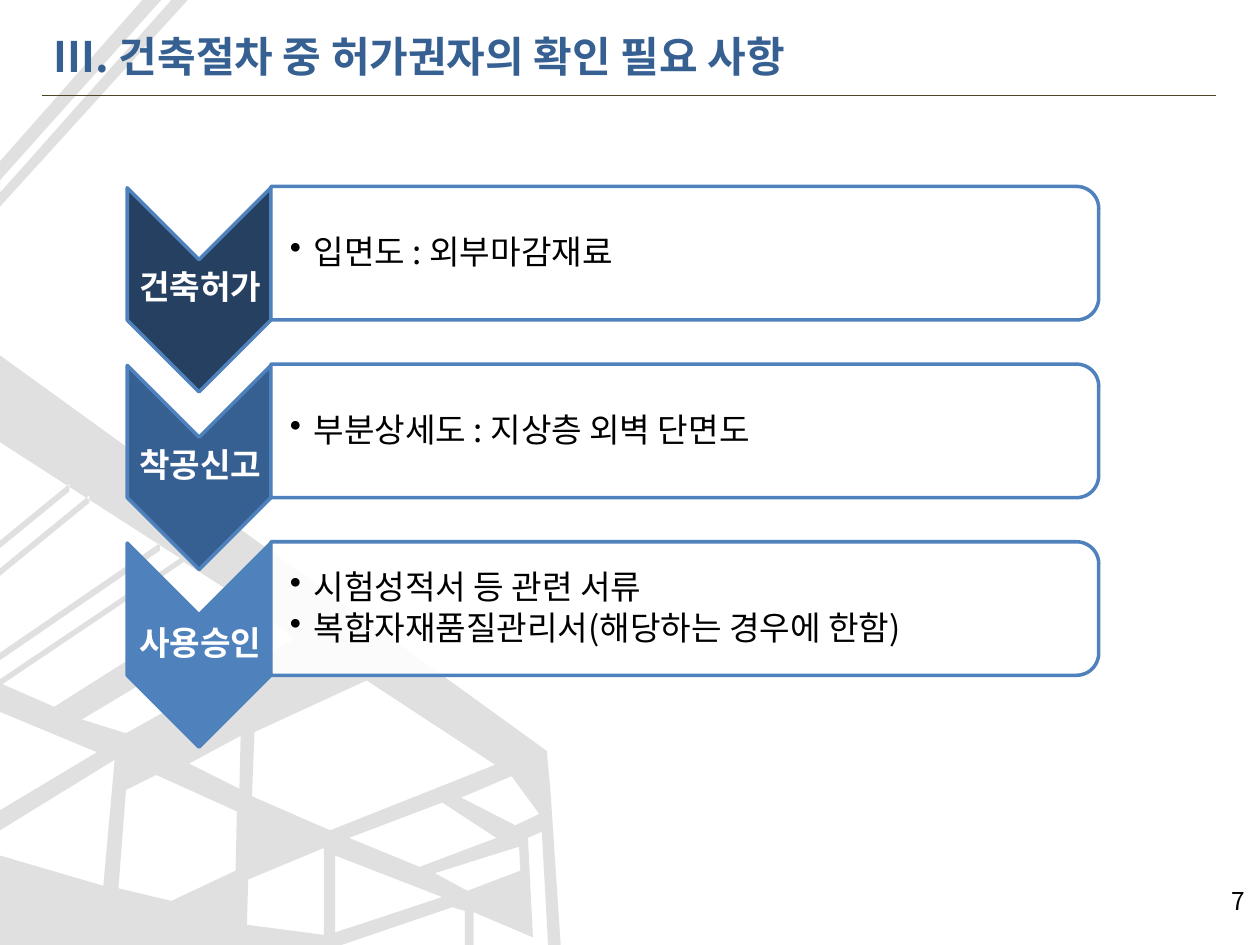
from lxml import etree
from pptx import Presentation
from pptx.dml.color import RGBColor
from pptx.enum import shapes, text
from pptx.oxml.ns import qn
from pptx.util import Inches, Pt

THEME = dict(
    font="Noto Sans CJK KR", title="376092", rule="4A452A", edge="4F81BD",
    steel="BFBFBF", white="FFFFFF", ink="000000",
    big=24, body=19, small=14,
)
TITLE = "III. 건축절차 중 허가권자의 확인 필요 사항"
PAGE = "7"
STEPS = [
    ("건축허가", "254061", ["입면도 : 외부마감재료"]),
    ("착공신고", "376092", ["부분상세도 : 지상층 외벽 단면도"]),
    ("사용승인", "4F81BD", ["시험성적서 등 관련 서류",
                        "복합자재품질관리서(해당하는 경우에 한함)"]),
]
CRANE = [
    (113, 0, 0, 128, 0, 164, 149, 0),
    (128, 0, 0, 143, 0, 153, 136, 0),
]
FRAME = [
    (434, 596, 0, 282, 0, 351, 143, 443, 0, 539, 0, 565, 77, 597,
     0, 643, 0, 659, 91, 603, 82, 703, 0, 679, 0, 750, 271, 750,
     359, 720, 369, 723, 369, 750, 376, 750, 376, 724, 423, 744,
     419, 665, 430, 660, 435, 750, 445, 750, 437, 629),
    (2, 543, 146, 446, 185, 471, 43, 561),
    (65, 571, 207, 486, 234, 507, 100, 582),
    (187, 691, 136, 715, 94, 705, 100, 627, 124, 615, 188, 644),
    (190, 626, 150, 606, 191, 584),
    (257, 742, 196, 734, 197, 698, 257, 673),
    (200, 632, 202, 581, 291, 540, 393, 607, 262, 659),
    (351, 637, 394, 665, 333, 688, 277, 665),
    (266, 740, 266, 679, 351, 712),
    (371, 707, 345, 693, 412, 672, 413, 691),
    (409, 655, 366, 633, 406, 616, 428, 646),
]
RAILS = [(432, 55, 387), (454, 71, 396), (521, 127, 434)]


def paint(shape, fill, alpha=None, edge=None):
    shape.shadow.inherit = False
    shape.fill.solid()
    shape.fill.fore_color.rgb = RGBColor.from_string(fill)
    if alpha:
        tone = shape.fill._xPr.find(".//" + qn("a:srgbClr"))
        etree.SubElement(tone, qn("a:alpha")).set("val", str(alpha * 1000))
    if edge:
        shape.line.color.rgb = RGBColor.from_string(edge)
        shape.line.width = Pt(2)
    else:
        shape.line.fill.background()


def trace(home, loops):
    pen = None
    for loop in loops:
        (x, y), *rest = zip(loop[::2], loop[1::2])
        if pen:
            pen.move_to(x, y)
        else:
            pen = home.build_freeform(x, y, scale=Inches(0.01))
        pen.add_line_segments(rest, close=True)
    paint(pen.convert_to_shape(), THEME["steel"], 48)


def turned(home, kind, x, y, w, h):
    left, top = x + (w - h) / 2, y + (h - w) / 2
    shape = home.add_shape(kind, *map(Inches, (left, top, h, w)))
    shape.rotation = 90
    return shape


def write(home, area, lines, size, color, bold=False, align=None,
          inset=None, middle=True, bullet=False, after=0):
    box = home.add_textbox(*map(Inches, area))
    frame = box.text_frame
    frame.word_wrap = True
    if middle:
        frame.vertical_anchor = text.MSO_ANCHOR.MIDDLE
    if inset:
        frame.margin_left = Inches(inset)
        frame.margin_right = frame.margin_top = frame.margin_bottom = Inches(0.01)
    frame.text = "\n".join(lines)
    for para in frame.paragraphs:
        para.alignment = align
        if inset:
            para.line_spacing = 0.9
            para.space_after = Pt(after)
        if bullet:
            props = para._p.get_or_add_pPr()
            props.set("marL", str(Inches(0.19)))
            props.set("indent", str(-Inches(0.19)))
            etree.SubElement(props, qn("a:buChar")).set("char", "•")
        for run in para.runs:
            font = run.font
            font.name, font.size, font.bold = THEME["font"], Pt(size), bold
            font.color.rgb = RGBColor.from_string(color)
            east = etree.SubElement(run._r.get_or_add_rPr(), qn("a:ea"))
            east.set("typeface", THEME["font"])


def step(home, row, name, fill, lines):
    y = 1.49 + 1.41 * row
    chevron = turned(home, shapes.MSO_SHAPE.CHEVRON, 1.01, y, 1.14, 1.62)
    paint(chevron, fill, edge=THEME["edge"])
    write(home, (1.02, y + 0.56, 1.14, 0.49), [name], THEME["body"],
          THEME["white"], True, text.PP_ALIGN.CENTER, 0.01)
    panel = turned(home, shapes.MSO_SHAPE.ROUND_2_SAME_RECTANGLE,
                   2.15, y - 0.01, 6.57, 1.06)
    paint(panel, THEME["white"], 90, THEME["edge"])
    write(home, (2.15, y + 0.05, 6.52, 0.95), lines, THEME["body"],
          THEME["ink"], inset=0.15, bullet=True, after=3)


def main():
    deck = Presentation()
    deck.slide_width, deck.slide_height = Inches(10), Inches(7.5)
    home = deck.slides.add_slide(deck.slide_layouts[6]).shapes
    trace(home, CRANE)
    bars = [(0, y - 3, 0, y + 3, x, end + 3, x, end - 3) for y, x, end in RAILS]
    trace(home, FRAME + bars)
    write(home, (0.33, 0.19, 9.28, 0.5), [TITLE], THEME["big"],
          THEME["title"], True)
    rule = home.add_connector(shapes.MSO_CONNECTOR.STRAIGHT,
                              *map(Inches, (0.33, 0.76, 9.65, 0.76)))
    rule.line.color.rgb = RGBColor.from_string(THEME["rule"])
    rule.line.width = Pt(0.75)
    etree.SubElement(rule._element.spPr, qn("a:effectLst"))
    write(home, (7.65, 6.98, 2.33, 0.52), [PAGE], THEME["small"],
          THEME["ink"], align=text.PP_ALIGN.RIGHT, middle=False)
    group = home.add_group_shape().shapes
    for row, (name, fill, lines) in enumerate(STEPS):
        step(group, row, name, fill, lines)
    deck.save("out.pptx")


if __name__ == "__main__":
    main()
